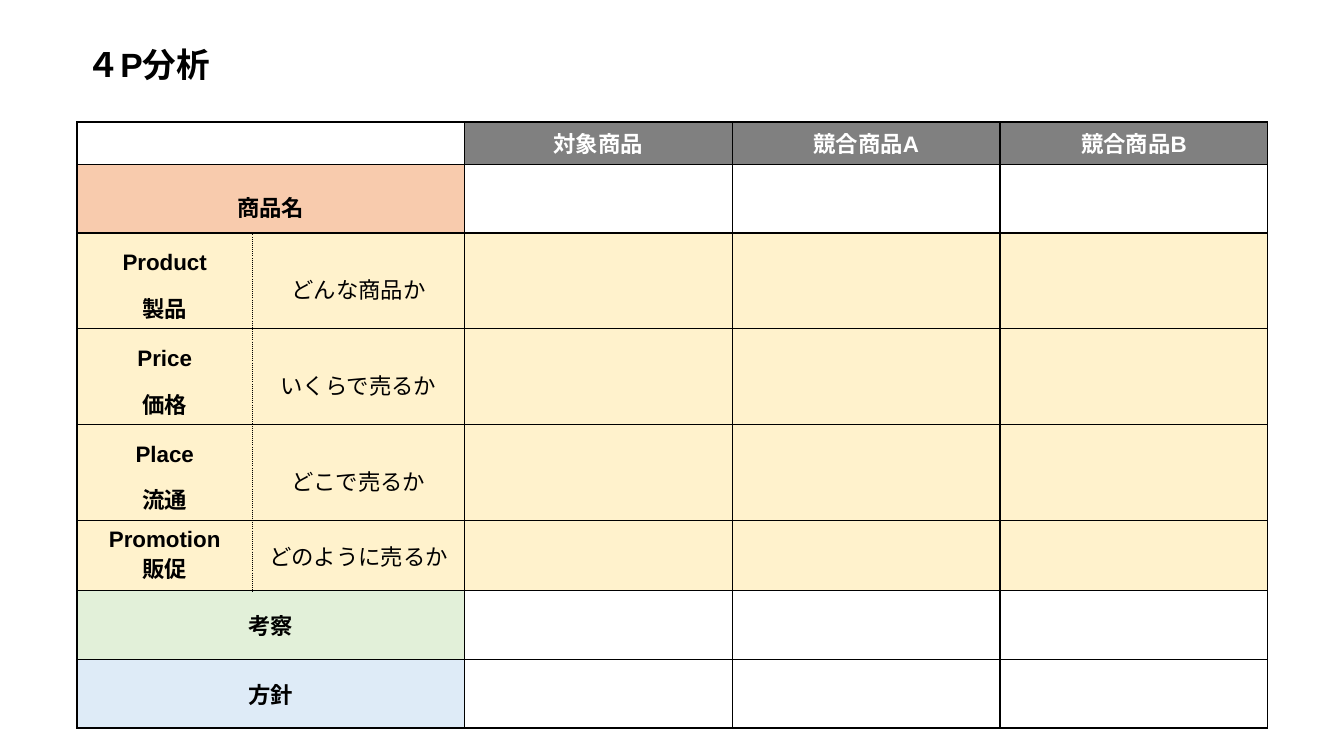
from lxml import etree
from pptx import Presentation
from pptx.dml.color import RGBColor
from pptx.enum.lang import MSO_LANGUAGE_ID
from pptx.enum.text import MSO_ANCHOR, PP_ALIGN
from pptx.oxml.ns import qn
from pptx.util import Pt

CENTER, LEFT = PP_ALIGN.CENTER, PP_ALIGN.LEFT
MIDDLE = MSO_ANCHOR.MIDDLE
JAPANESE = MSO_LANGUAGE_ID.JAPANESE
COLORS = {
    "black": "000000", "white": "FFFFFF", "header": "808080",
    "name": "F8CBAD", "four_p": "FFF2CC", "insight": "E2F0D9", "policy": "DEEBF7",
}


def write(frame, text, size, color="black", bold=True, align=CENTER, spacing=None):
    frame.text = text
    for para in frame.paragraphs:
        para.alignment = align
        para.line_spacing = spacing
        for span in para.runs:
            span.font.name = "Arial"
            span.font.size = Pt(size)
            span.font.bold = bold
            span.font.color.rgb = RGBColor.from_string(COLORS[color])
            span.font.language_id = JAPANESE


def style_cell(cell, fill, dotted_side=None):
    properties = cell._tc.get_or_add_tcPr()
    for side in ("lnL", "lnR", "lnT", "lnB"):
        line = etree.SubElement(properties, qn(f"a:{side}"), w=str(Pt(1)))
        solid = etree.SubElement(line, qn("a:solidFill"))
        etree.SubElement(solid, qn("a:srgbClr"), val=COLORS["black"])
        dash = "sysDot" if side == dotted_side else "solid"
        etree.SubElement(line, qn("a:prstDash"), val=dash)
    cell.fill.solid()
    cell.fill.fore_color.rgb = RGBColor.from_string(COLORS[fill])
    cell.vertical_anchor = MIDDLE


deck = Presentation()
deck.slide_width, deck.slide_height = Pt(960), Pt(540)
page = deck.slides.add_slide(deck.slide_layouts[5])

# Title
title = page.shapes.title
title.left, title.top, title.width, title.height = Pt(54.7), Pt(27.4), Pt(227.5), Pt(36)
title.text_frame.vertical_anchor = MIDDLE
write(title.text_frame, "４P分析", 24, align=LEFT)

# Rows: height, label, question, label fill, value fill, line spacing
headings = ["対象商品", "競合商品A", "競合商品B"]
rows = [
    (27.4, "", "", "white", "header", None),
    (49, "商品名", "", "name", "white", 1.5),
    (59.8, "Product\n製品", "どんな商品か", "four_p", "four_p", 1.5),
    (59.8, "Price\n価格", "いくらで売るか", "four_p", "four_p", 1.5),
    (59.8, "Place\n流通", "どこで売るか", "four_p", "four_p", 1.5),
    (50.4, "Promotion\n販促", "どのように売るか", "four_p", "four_p", None),
    (49, "考察", "", "insight", "white", None),
    (49, "方針", "", "policy", "white", None),
]
widths = [125.4, 151.4, 191.3, 191.3, 191.3]

# Table frame
table = page.shapes.add_table(
    len(rows), len(widths), Pt(55), Pt(87.1), Pt(sum(widths)), Pt(sum(row[0] for row in rows))
).table
table.first_row = table.horz_banding = False
for column, width in zip(table.columns, widths):
    column.width = Pt(width)

# Table contents
for index, (height, label, question, label_fill, value_fill, spacing) in enumerate(rows):
    table.rows[index].height = Pt(height)
    label_cell, question_cell = table.cell(index, 0), table.cell(index, 1)
    style_cell(label_cell, label_fill, "lnR" if question else None)
    style_cell(question_cell, label_fill, "lnL" if question else None)
    for column in range(2, len(widths)):
        style_cell(table.cell(index, column), value_fill)
    if label:
        write(label_cell.text_frame, label, 16, spacing=spacing)
    if question:
        write(question_cell.text_frame, question, 16, bold=False, spacing=spacing)
        question_cell.margin_left = question_cell.margin_right = Pt(10.8)
        question_cell.margin_top = question_cell.margin_bottom = Pt(10.8)
    else:
        label_cell.merge(question_cell)

# Column headings
for column, heading in enumerate(headings, start=2):
    write(table.cell(0, column).text_frame, heading, 16, "white")

deck.save("out.pptx")
